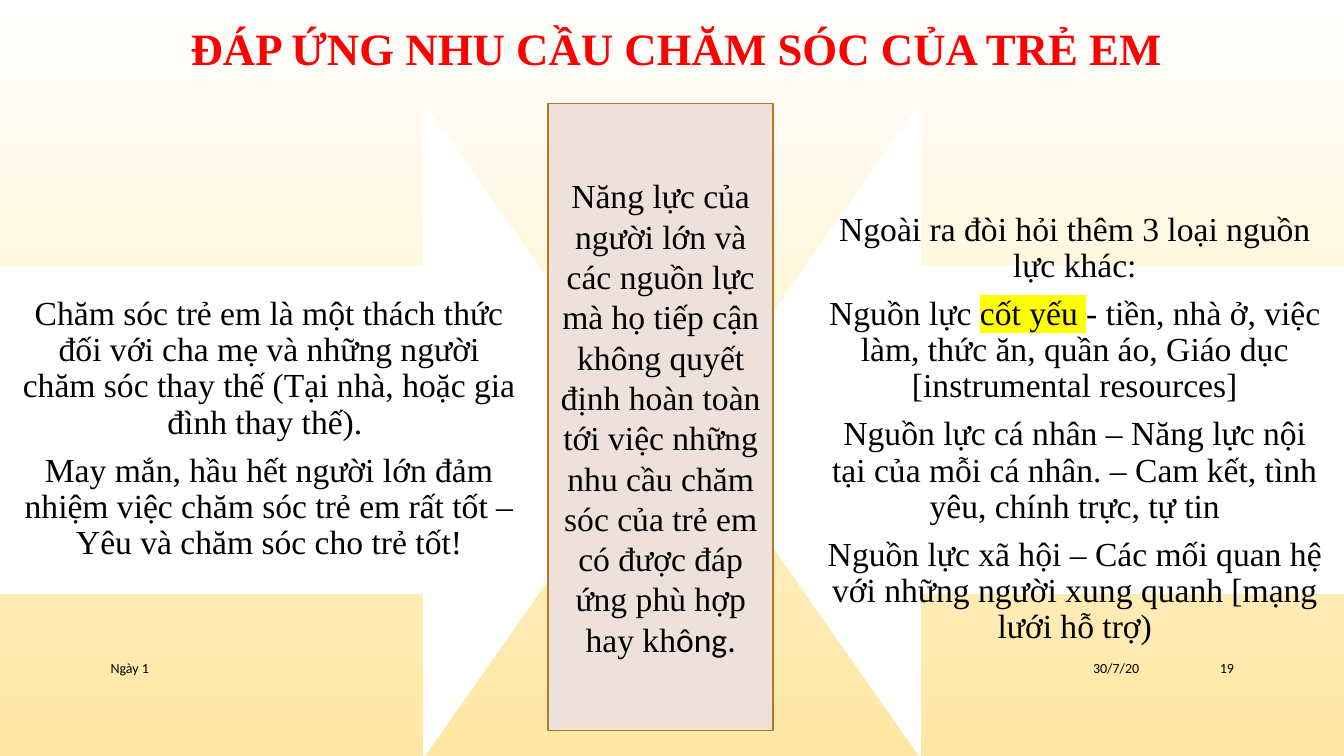
from dataclasses import dataclass

from lxml.etree import Element
from pptx import Presentation
from pptx.dml.color import RGBColor as Rgb
from pptx.enum.shapes import MSO_SHAPE as Shape
from pptx.enum.text import MSO_ANCHOR as Anchor, MSO_AUTO_SIZE as AutoSize, PP_ALIGN as Align
from pptx.oxml.ns import qn
from pptx.util import Pt


@dataclass(frozen=True)
class Theme:
    serif: str = "Times New Roman"
    sans: str = "Calibri"
    title_size: float = 32
    body_size: float = 24
    footer_size: float = 10
    line_width: float = 1.25
    title: str = "FF0000"
    ink: str = "000000"
    white: str = "FFFFFF"
    sand: str = "FFE7A3"
    panel: str = "EEE0DB"
    panel_edge: str = "B27822"
    marker: str = "FFFF00"


class SlideBuilder:
    def __init__(self, deck, theme):
        self.theme = theme
        self.page = deck.slides.add_slide(deck.slide_layouts[5])

    def background(self, *colors):
        fill = self.page.background.fill
        fill.gradient()
        fill.gradient_angle = 270
        for stop, color in zip(fill.gradient_stops, colors):
            stop.color.rgb = Rgb.from_string(color)

    def span(self, para, text, size, font, color, bold=False, marker=None):
        span = para.add_run()
        span.text = text
        span.font.size, span.font.bold = Pt(size), bold
        span.font.color.rgb = Rgb.from_string(color)
        if marker:
            highlight = Element(qn("a:highlight"))
            highlight.append(Element(qn("a:srgbClr"), val=marker))
            properties = span._r.get_or_add_rPr()
            properties.find(qn("a:solidFill")).addnext(highlight)
        span.font.name = font

    def set_text(self, box, paras, size, align, spacing=1.0, after=0, inset=None):
        """Each para is a list of (text, options) pairs."""
        frame = box.text_frame
        frame.word_wrap, frame.auto_size = True, AutoSize.NONE
        frame.vertical_anchor = Anchor.MIDDLE
        if inset is not None:
            frame.margin_left = frame.margin_right = Pt(inset)
            frame.margin_top = frame.margin_bottom = Pt(inset)
        for index, spans in enumerate(paras):
            para = frame.add_paragraph() if index else frame.paragraphs[0]
            para.alignment, para.line_spacing = align, spacing
            para.space_before, para.space_after = Pt(0), Pt(after)
            for text, options in spans:
                style = {"font": self.theme.serif, "color": self.theme.ink, **options}
                self.span(para, text, size, **style)

    def title(self, text, left, top, width, height):
        box = self.page.shapes.title
        box.left, box.top, box.width, box.height = map(Pt, (left, top, width, height))
        options = {"color": self.theme.title, "bold": True}
        self.set_text(box, [[(text, options)]], self.theme.title_size, Align.CENTER, 0.9)

    def shape(self, kind, left, top, width, height, fill, line):
        shape = self.page.shapes.add_shape(kind, *map(Pt, (left, top, width, height)))
        shape.shadow.inherit = False
        shape.fill.solid()
        shape.fill.fore_color.rgb = Rgb.from_string(fill)
        shape.line.color.rgb = Rgb.from_string(line)
        shape.line.width = Pt(self.theme.line_width)
        return shape

    def arrow(self, left, top, side, rotation):
        arrow = self.shape(Shape.DOWN_ARROW, left, top, side, side,
                           self.theme.white, self.theme.white)
        arrow.rotation = rotation
        arrow.adjustments[0], arrow.adjustments[1] = 0.5, 0.35

    def panel(self, spans, left, top, width, height):
        panel = self.shape(Shape.RECTANGLE, left, top, width, height,
                           self.theme.panel, self.theme.panel_edge)
        self.set_text(panel, [spans], self.theme.body_size, Align.CENTER)

    def textbox(self, left, top, width, height, paras, size, align, **layout):
        box = self.page.shapes.add_textbox(*map(Pt, (left, top, width, height)))
        self.set_text(box, paras, size, align, **layout)

    def body(self, paras, left, top, width, height):
        self.textbox(left, top, width, height, paras, self.theme.body_size,
                     Align.CENTER, spacing=0.9, after=8.4, inset=13.68)

    def footer(self, text, left, width, align):
        paras = [[(text, {"font": self.theme.sans})]]
        self.textbox(left, 463, width, 28.8, paras, self.theme.footer_size, align)


def main():
    width, height = 960, 540
    theme = Theme()
    deck = Presentation()
    deck.slide_width, deck.slide_height = Pt(width), Pt(height)
    slide = SlideBuilder(deck, theme)

    # Background and title
    slide.background(theme.white, theme.sand)
    slide.title("ĐÁP ỨNG NHU CẦU CHĂM SÓC CỦA TRẺ EM", 6.5, 6.5, 953.5, 60.5)

    # Facing arrows, each with its text
    challenge = [
        [("Chăm sóc trẻ em là một thách thức đối với cha mẹ và những người "
          "chăm sóc thay thế (Tại nhà, hoặc gia đình thay thế). ", {})],
        [("May mắn, hầu hết người lớn đảm nhiệm việc chăm sóc trẻ em rất tốt – "
          "Yêu và chăm sóc cho trẻ tốt!", {})],
    ]
    resources = [
        [("Ngoài ra đòi hỏi thêm 3 loại nguồn lực khác:", {})],
        [("Nguồn lực ", {}),
         ("cốt yếu ", {"marker": theme.marker}),
         ("- tiền, nhà ở, việc làm, thức ăn, quần áo, Giáo dục "
          "[instrumental resources]", {})],
        [("Nguồn lực cá nhân – Năng lực nội tại của mỗi cá nhân. – Cam kết, "
          "tình yêu, chính trực, tự tin", {})],
        [("Nguồn lực xã hội – Các mối quan hệ với những người xung quanh "
          "[mạng lưới hỗ trợ)", {})],
    ]
    side, text_width = 466, 384.5
    for paras, rotation, on_right in ((challenge, 270, 0), (resources, 90, 1)):
        slide.arrow(on_right * (width - side), height - side, side, rotation)
        slide.body(paras, on_right * (width - text_width), 190, text_width, 233)

    # Central panel
    slide.panel([
        ("Năng lực của người lớn và các nguồn lực mà họ tiếp cận không quyết "
         "định hoàn toàn tới việc những nhu cầu chăm sóc của trẻ em có được "
         "đáp ứng phù hợp hay kh", {}),
        ("ông.", {"font": theme.sans}),
    ], 391.7, 74, 160.5, 447.8)

    # Footer
    slide.footer("19", 828, 60.5, Align.RIGHT)
    slide.footer("30/7/20", 604.8, 216, Align.RIGHT)
    slide.footer("Ngày 1", 72, 525.6, Align.LEFT)

    deck.save("out.pptx")


if __name__ == "__main__":
    main()
